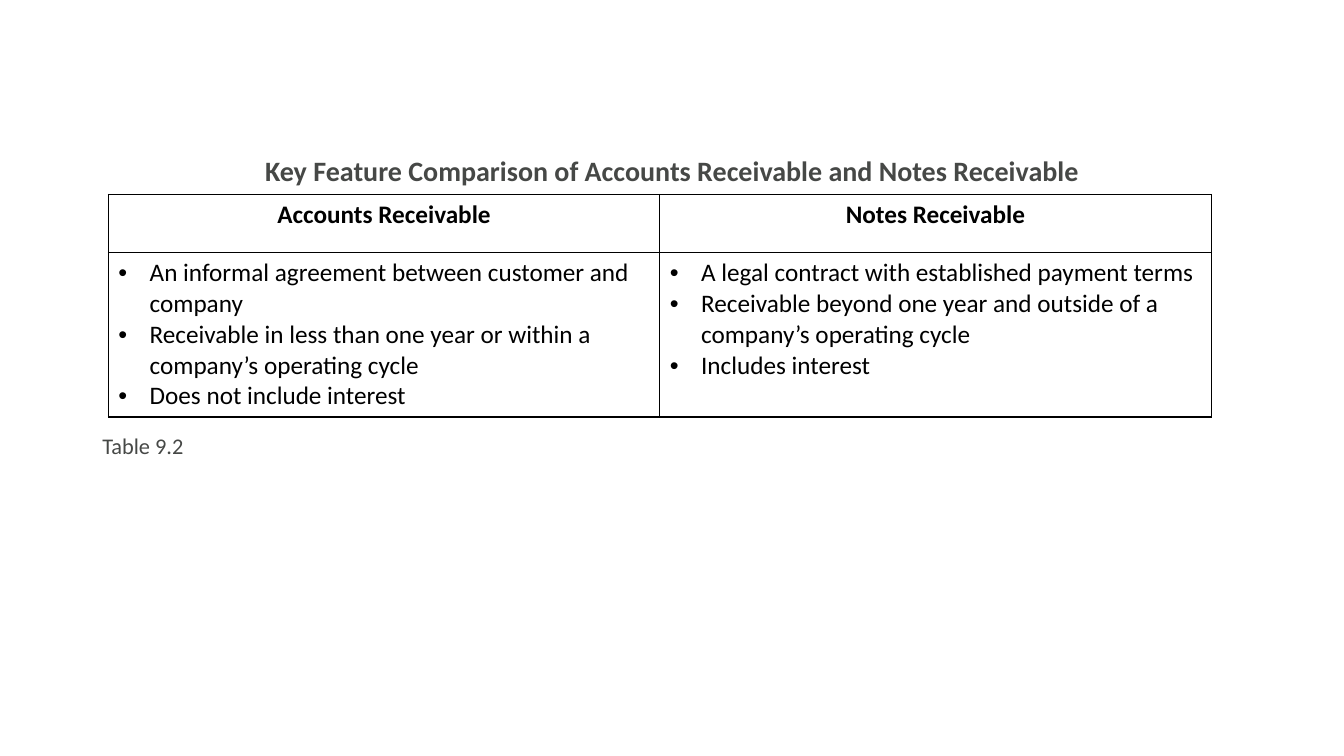
import pptx
import pptx.dml.color
import pptx.enum.text
import pptx.oxml
import pptx.oxml.ns
import pptx.util

ALIGN = pptx.enum.text.PP_ALIGN
BLACK = "000000"
GREY = "464846"

HEADERS = ["Accounts Receivable", "Notes Receivable"]
FEATURES = [
    [
        "An informal agreement between customer and company",
        "Receivable in less than one year or within a company’s operating cycle",
        "Does not include interest",
    ],
    [
        "A legal contract with established payment terms",
        "Receivable beyond one year and outside of a company’s operating cycle",
        "Includes interest",
    ],
]


def color(value):
    return pptx.dml.color.RGBColor.from_string(value)


def element(xml):
    return pptx.oxml.parse_xml(xml.replace(" ", f" {pptx.oxml.ns.nsdecls('a')} ", 1))


class Deck:
    font = "Calibri"
    columns, rows = 160, 90
    indent = pptx.util.Inches(0.31)

    def __init__(self):
        self.prs = pptx.Presentation()
        self.prs.slide_width = pptx.util.Inches(13.33)
        self.prs.slide_height = pptx.util.Inches(7.5)
        self.s = self.prs.slides.add_slide(self.prs.slide_layouts[6])

    def x(self, columns):
        return round(self.prs.slide_width * columns / self.columns)

    def y(self, rows):
        return round(self.prs.slide_height * rows / self.rows)

    def run(self, p, text, size, tint, bold=False):
        r = p.add_run()
        r.text = text
        r.font.name = self.font
        r.font.size = pptx.util.Pt(size)
        r.font.bold = bold
        r.font.color.rgb = color(tint)

    def text(self, left, top, width, height, text, size, align, bold=False):
        sp = self.s.shapes.add_textbox(self.x(left), self.y(top), self.x(width), self.y(height))
        tf = sp.text_frame
        tf.word_wrap = True
        p = tf.paragraphs[0]
        p.alignment = align
        p.line_spacing = 0.9
        self.run(p, text, size, GREY, bold)

    def bullet(self, p):
        ppr = p._p.get_or_add_pPr()
        ppr.set("marL", str(self.indent))
        ppr.set("indent", str(-self.indent))
        ppr.append(element('<a:buFont typeface="Arial"/>'))
        ppr.append(element('<a:buChar char="•"/>'))

    def border(self, cell):
        tcpr = cell._tc.get_or_add_tcPr()
        for i, side in enumerate("LRTB"):
            tcpr.insert(i, element(
                f'<a:ln{side} w="{pptx.util.Pt(1)}"><a:solidFill>'
                f'<a:srgbClr val="{BLACK}"/></a:solidFill></a:ln{side}>'
            ))

    def cell(self, cell, lines, bulleted):
        cell.fill.background()
        self.border(cell)
        tf = cell.text_frame
        for i, line in enumerate(lines):
            p = tf.add_paragraph() if i else tf.paragraphs[0]
            if bulleted:
                self.bullet(p)
            else:
                p.alignment = ALIGN.CENTER
            self.run(p, line, 18, BLACK, not bulleted)

    def table(self, left, top, width, heights, headers, features):
        frame = self.s.shapes.add_table(
            len(heights), len(headers), self.x(left), self.y(top), self.x(width), self.y(sum(heights))
        )
        table = frame.table
        table.first_row = False
        table.horz_banding = False
        for row, height in zip(table.rows, heights):
            row.height = self.y(height)
        for i, (header, lines) in enumerate(zip(headers, features)):
            self.cell(table.cell(0, i), [header], False)
            self.cell(table.cell(1, i), lines, True)

    def save(self):
        self.prs.save("out.pptx")


def main():
    deck = Deck()
    deck.text(11, 18.1, 138, 4.8, "Key Feature Comparison of Accounts Receivable and Notes Receivable",
              20, ALIGN.CENTER, True)
    deck.table(12.9, 23.15, 131.3, [6.95, 19.55], HEADERS, FEATURES)
    deck.text(11, 51.25, 138, 4.2, "Table 9.2", 16, ALIGN.LEFT)
    deck.save()


if __name__ == "__main__":
    main()
